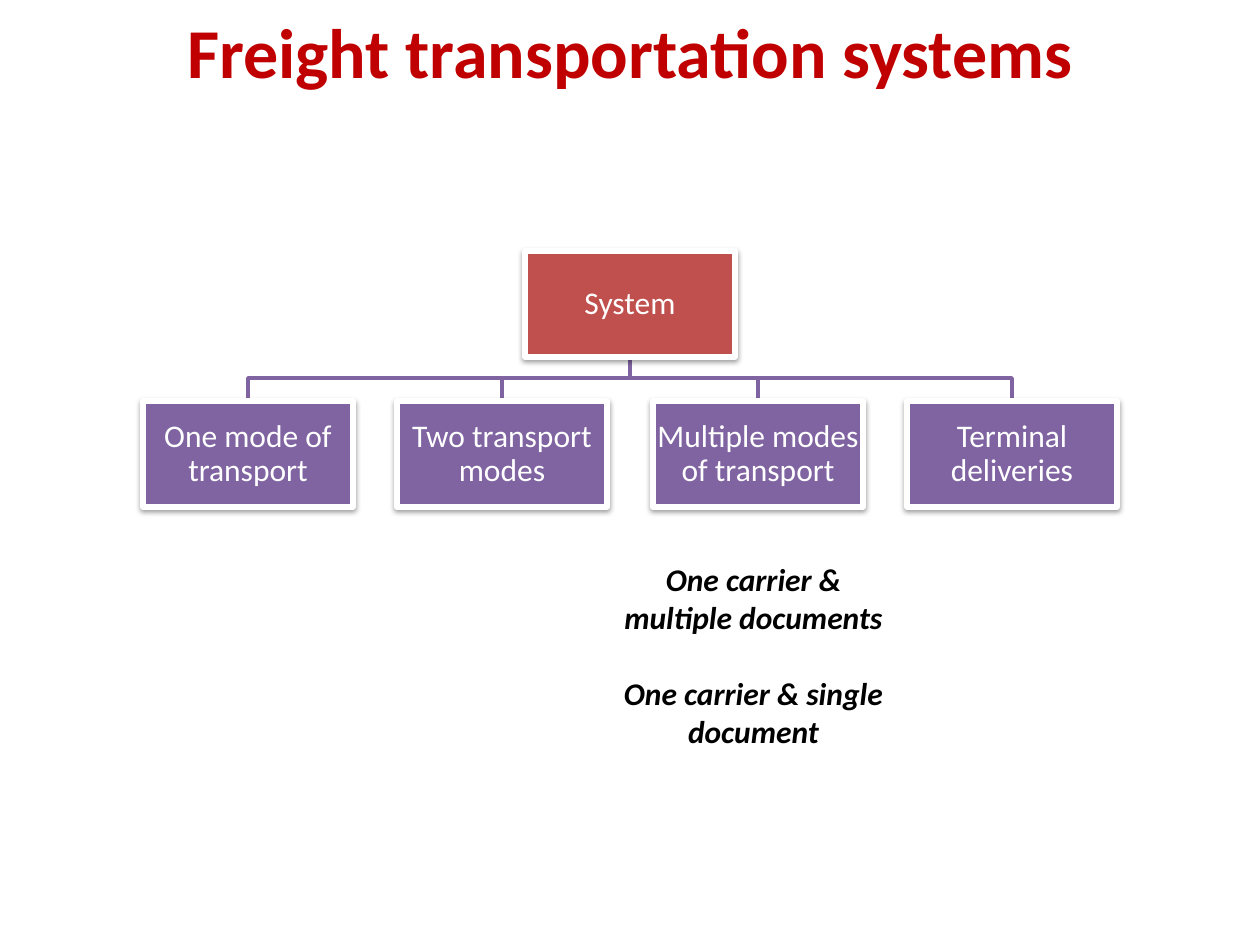
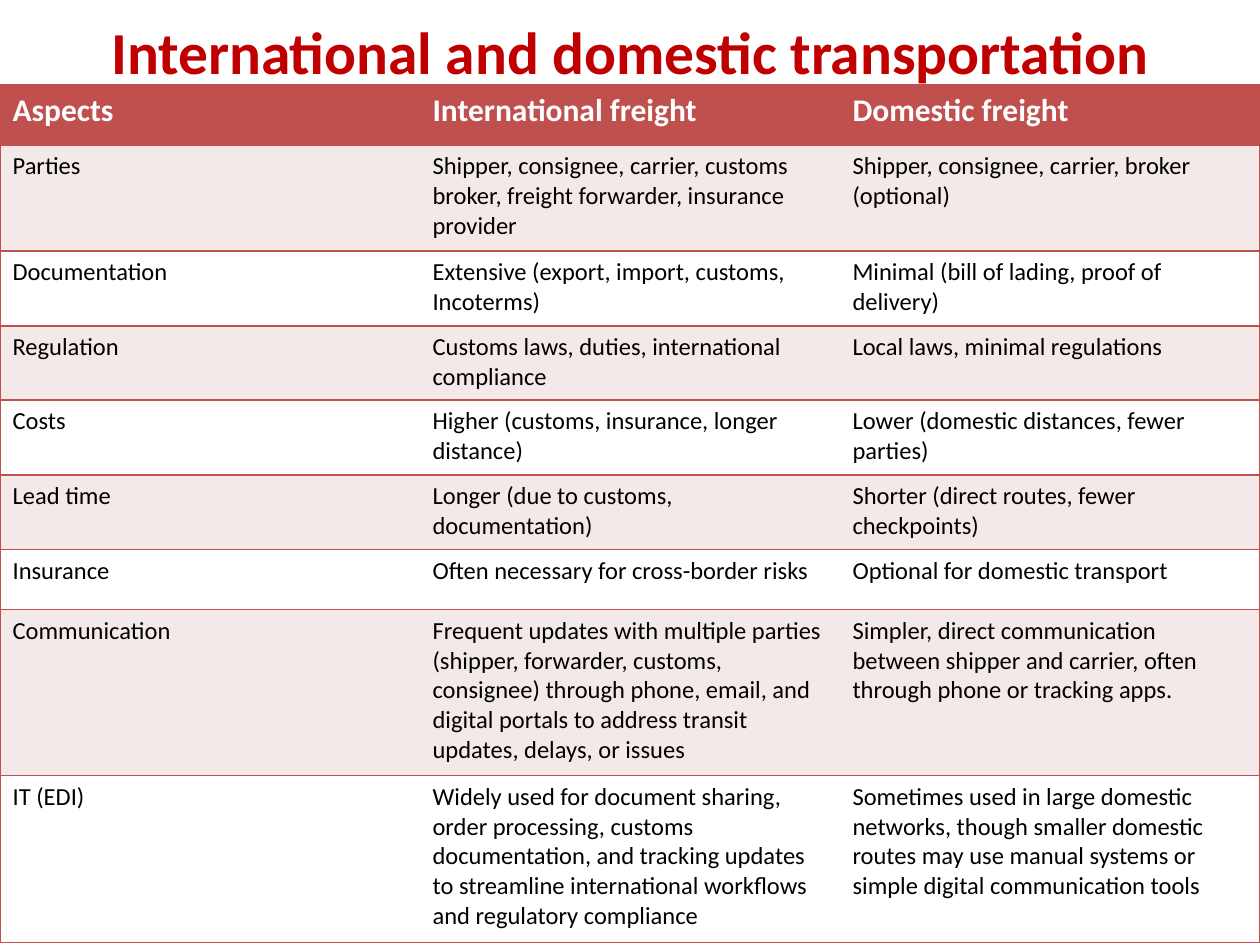
"""Builds two slides on freight transport: a system chart and a comparison table."""
from dataclasses import dataclass

from lxml import etree
from pptx import Presentation
from pptx.dml.color import RGBColor
from pptx.enum.shapes import MSO_SHAPE
from pptx.enum.text import MSO_ANCHOR, MSO_AUTO_SIZE, PP_ALIGN
from pptx.oxml.ns import qn
from pptx.util import Pt

CENTER = PP_ALIGN.CENTER
MIDDLE = MSO_ANCHOR.MIDDLE
RECTANGLE = MSO_SHAPE.RECTANGLE
NO_FIT = MSO_AUTO_SIZE.NONE
EMU_PER_PX = 914400 / 126


@dataclass(frozen=True)
class Theme:
    font: str = "Calibri"
    title: str = "C00000"
    red: str = "C0504D"
    purple: str = "8064A2"
    band: str = "F4E9E9"
    white: str = "FFFFFF"
    black: str = "000000"
    label_size: int = 18
    cell_size: int = 14
    branch_width: int = 2
    outline_width: int = 3
    border_width: int = 1


THEME = Theme()

SYSTEM_TITLE = ("Freight transportation systems", 40)
SYSTEM_ROOT = "System"
SYSTEM_KINDS = [
    "One mode of transport",
    "Two transport modes",
    "Multiple modes of transport",
    "Terminal deliveries",
]
CARRIER_OPTIONS = ["One carrier & multiple documents", "One carrier & single document"]

COMPARISON_TITLE = ("International and domestic transportation", 34)
COMPARISON = [
    ("Aspects", "International freight", "Domestic freight"),
    ("Parties",
     "Shipper, consignee, carrier, customs broker, freight forwarder, insurance provider",
     "Shipper, consignee, carrier, broker (optional)"),
    ("Documentation",
     "Extensive (export, import, customs, Incoterms)",
     "Minimal (bill of lading, proof of delivery)"),
    ("Regulation",
     "Customs laws, duties, international compliance",
     "Local laws, minimal regulations"),
    ("Costs",
     "Higher (customs, insurance, longer distance)",
     "Lower (domestic distances, fewer parties)"),
    ("Lead time",
     "Longer (due to customs, documentation)",
     "Shorter (direct routes, fewer checkpoints)"),
    ("Insurance",
     "Often necessary for cross-border risks",
     "Optional for domestic transport"),
    ("Communication",
     "Frequent updates with multiple parties (shipper, forwarder, customs, consignee) "
     "through phone, email, and digital portals to address transit updates, delays, or issues",
     "Simpler, direct communication between shipper and carrier, often through phone "
     "or tracking apps."),
    ("IT (EDI)",
     "Widely used for document sharing, order processing, customs documentation, and "
     "tracking updates to streamline international workflows and regulatory compliance",
     "Sometimes used in large domestic networks, though smaller domestic routes may use "
     "manual systems or simple digital communication tools"),
]
ROW_HEIGHTS = [60, 106, 75, 74, 75, 75, 60, 166, 167]

SLIDE_WIDTH, SLIDE_HEIGHT = 1260, 945
TITLE_AREA = (63, 1, 1134, 100)
BOX_WIDTH, BOX_HEIGHT, BOX_PITCH = 210, 106, 255
ROOT_TOP, BRANCH_Y, KINDS_TOP = 251, 378, 401
OPTIONS_AREA = (610, 554, 287, 204)
TABLE_TOP = 85


def px(length):
    return round(length * EMU_PER_PX)


def area(*lengths):
    return [px(length) for length in lengths]


def rgb(color):
    return RGBColor.from_string(color)


def style_text(frame, size, color, bold=False, italic=False):
    for paragraph in frame.paragraphs:
        for run in paragraph.runs:
            font = run.font
            font.name, font.size = THEME.font, Pt(size)
            font.bold, font.italic = bold, italic
            font.color.rgb = rgb(color)


def add_titled_slide(deck, heading):
    words, size = heading
    slide = deck.slides.add_slide(deck.slide_layouts[5])
    title = slide.shapes.title
    title.left, title.top, title.width, title.height = area(*TITLE_AREA)
    frame = title.text_frame
    frame.text = words
    frame.auto_size = NO_FIT
    frame.vertical_anchor = MIDDLE
    frame.paragraphs[0].alignment = CENTER
    style_text(frame, size, THEME.title, bold=True)
    return slide


def add_soft_shadow(shape):
    shape.shadow.inherit = False
    effects = shape._element.spPr.find(qn("a:effectLst"))
    shadow = etree.SubElement(effects, qn("a:outerShdw"), blurRad="40000",
                              dist="20000", dir="5400000", rotWithShape="0")
    tint = etree.SubElement(shadow, qn("a:srgbClr"), val=THEME.black)
    etree.SubElement(tint, qn("a:alpha"), val="38000")


def add_box(slide, center_x, top, words, color):
    box = slide.shapes.add_shape(
        RECTANGLE, *area(center_x - BOX_WIDTH / 2, top, BOX_WIDTH, BOX_HEIGHT))
    box.fill.solid()
    box.fill.fore_color.rgb = rgb(color)
    box.line.color.rgb = rgb(THEME.white)
    box.line.width = Pt(THEME.outline_width)
    add_soft_shadow(box)
    frame = box.text_frame
    frame.text = words
    frame.word_wrap = True
    frame.vertical_anchor = MIDDLE
    frame.margin_left = frame.margin_right = px(1)
    frame.margin_top = frame.margin_bottom = px(1)
    frame.paragraphs[0].alignment = CENTER
    frame.paragraphs[0].line_spacing = 0.9
    style_text(frame, THEME.label_size, THEME.white)


def add_branch(slide, root_x, kind_x):
    outline = slide.shapes.build_freeform(root_x, ROOT_TOP + BOX_HEIGHT, scale=EMU_PER_PX)
    outline.add_line_segments(
        [(root_x, BRANCH_Y), (kind_x, BRANCH_Y), (kind_x, KINDS_TOP)], close=False)
    branch = outline.convert_to_shape()
    branch.fill.background()
    branch.line.color.rgb = rgb(THEME.purple)
    branch.line.width = Pt(THEME.branch_width)
    branch.shadow.inherit = False


def build_system_slide(deck):
    slide = add_titled_slide(deck, SYSTEM_TITLE)
    root_x = SLIDE_WIDTH // 2
    first_x = root_x - BOX_PITCH * (len(SYSTEM_KINDS) - 1) / 2
    kind_xs = [round(first_x + i * BOX_PITCH) for i in range(len(SYSTEM_KINDS))]
    for kind_x in reversed(kind_xs):
        add_branch(slide, root_x, kind_x)
    add_box(slide, root_x, ROOT_TOP, SYSTEM_ROOT, THEME.red)
    for kind_x, kind in zip(kind_xs, SYSTEM_KINDS):
        add_box(slide, kind_x, KINDS_TOP, kind, THEME.purple)

    options = slide.shapes.add_textbox(*area(*OPTIONS_AREA)).text_frame
    options.word_wrap = True
    options.text = "\n".join(CARRIER_OPTIONS)
    for i, paragraph in enumerate(options.paragraphs):
        paragraph.alignment = CENTER
        if i:
            paragraph.space_before = Pt(22)
    style_text(options, THEME.label_size, THEME.black, bold=True, italic=True)


def set_borders(cell, visible_sides):
    properties = cell._tc.get_or_add_tcPr()
    for side in "LRTB":
        border = etree.SubElement(properties, qn(f"a:ln{side}"),
                                  w=str(Pt(THEME.border_width)))
        if side in visible_sides:
            paint = etree.SubElement(border, qn("a:solidFill"))
            etree.SubElement(paint, qn("a:srgbClr"), val=THEME.red)
        else:
            etree.SubElement(border, qn("a:noFill"))


def build_comparison_slide(deck):
    slide = add_titled_slide(deck, COMPARISON_TITLE)
    columns = len(COMPARISON[0])
    table = slide.shapes.add_table(
        len(COMPARISON), columns,
        *area(0, TABLE_TOP, SLIDE_WIDTH, sum(ROW_HEIGHTS))).table
    table.horz_banding = False
    for column in table.columns:
        column.width = px(SLIDE_WIDTH / columns)
    for r, (aspect, height) in enumerate(zip(COMPARISON, ROW_HEIGHTS)):
        table.rows[r].height = px(height)
        header = r == 0
        fill = THEME.red if header else THEME.band if r % 2 else THEME.white
        size = THEME.label_size if header else THEME.cell_size
        color = THEME.white if header else THEME.black
        for c, words in enumerate(aspect):
            cell = table.cell(r, c)
            set_borders(cell, "TB" + "L" * (c == 0) + "R" * (c == columns - 1))
            cell.fill.solid()
            cell.fill.fore_color.rgb = rgb(fill)
            cell.text_frame.text = words
            style_text(cell.text_frame, size, color, bold=header)


def main():
    deck = Presentation()
    deck.slide_width, deck.slide_height = area(SLIDE_WIDTH, SLIDE_HEIGHT)
    build_system_slide(deck)
    build_comparison_slide(deck)
    deck.save("out.pptx")


if __name__ == "__main__":
    main()
